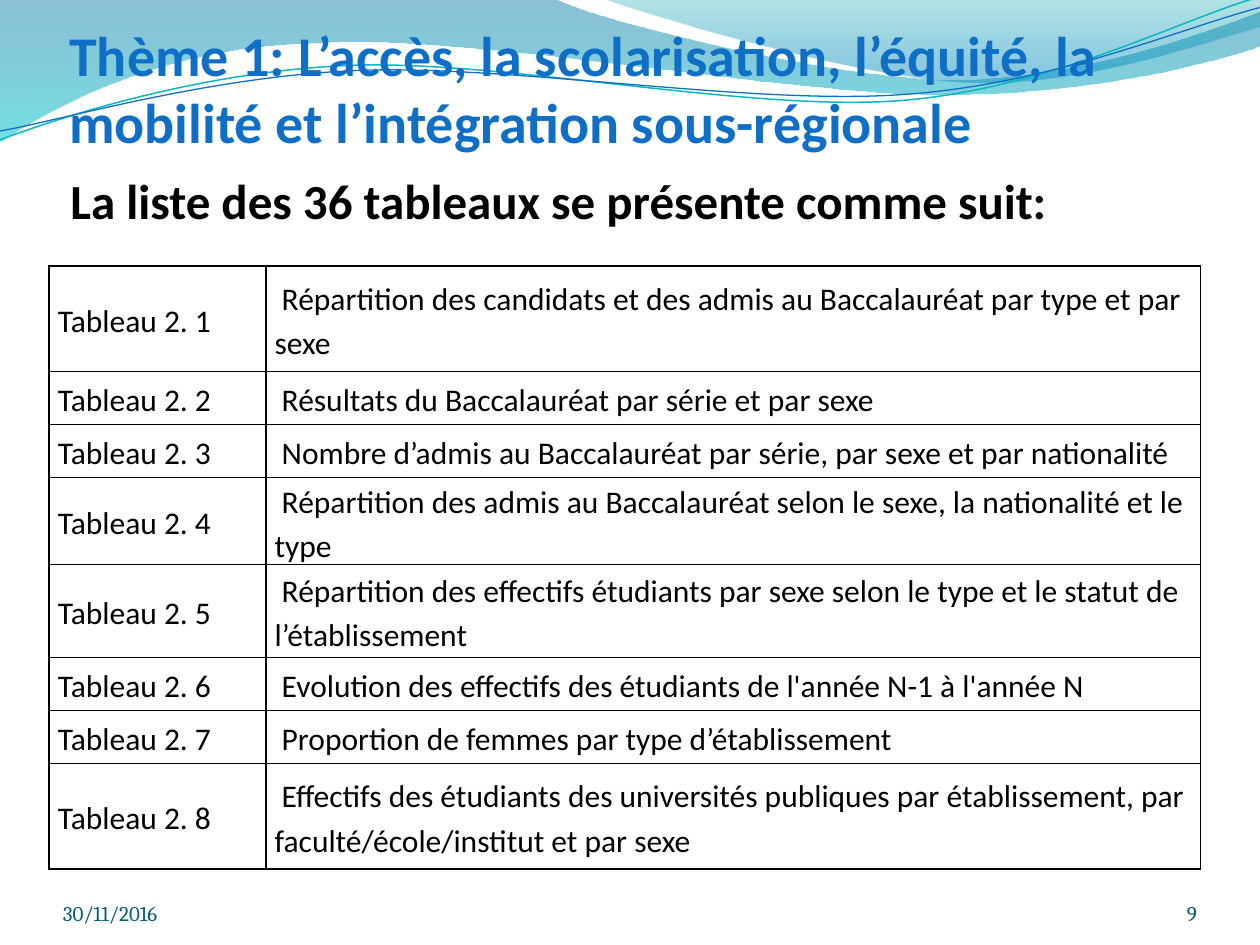
import math

import pptx
import pptx.util
import pptx.dml.color
import pptx.enum.text
import pptx.oxml
import pptx.oxml.ns
from pptx.util import Inches

RGBColor = pptx.dml.color.RGBColor
BLUE = RGBColor(0x0F, 0x6F, 0xC6)
TEAL = RGBColor(0x0A, 0xB8, 0xBF)
DARK = RGBColor(0x04, 0x5D, 0x75)
BLACK = RGBColor(0, 0, 0)
DEEP = RGBColor(0x00, 0x74, 0xA1)
AQUA = RGBColor(0x00, 0xC6, 0xCF)
SEA = RGBColor(0x00, 0xA1, 0xA9)
SKY = RGBColor(0x00, 0x8B, 0xBF)
ALIGN = pptx.enum.text.PP_ALIGN
ANCHOR = pptx.enum.text.MSO_ANCHOR
NS = pptx.oxml.ns.nsdecls("a")
TURN = 2.7

prs = pptx.Presentation()
prs.slide_width = Inches(10)
prs.slide_height = Inches(7.5)
slide = prs.slides.add_slide(prs.slide_layouts[6])


def add_wave(start, steps, close):
    """Two numbers in a step make a line, six a cubic curve."""
    dots = [tuple(map(Inches, step[-2:])) for step in [start] + steps]
    pen = slide.shapes.build_freeform(*dots[0])
    pen.add_line_segments(dots[1:], close=close)
    wave = pen.convert_to_shape()
    wave.shadow.inherit = False
    # Turn the straight parts into curves
    parts = wave._element.findall(".//" + pptx.oxml.ns.qn("a:lnTo"))
    for part, step in zip(parts, steps):
        if len(step) == 6:
            pts = "".join(
                f'<a:pt x="{Inches(x) - wave.left}" y="{Inches(y) - wave.top}"/>'
                for x, y in zip(step[::2], step[1::2]))
            part.getparent().replace(part, pptx.oxml.parse_xml(
                f"<a:cubicBezTo {NS}>{pts}</a:cubicBezTo>"))
    return wave


def add_label(words, left, top, width, height, font, size, color, bold=False,
              inset=0, align=ALIGN.LEFT):
    box = slide.shapes.add_textbox(*map(Inches, (left, top, width, height)))
    frame = box.text_frame
    frame.word_wrap = True
    frame.vertical_anchor = ANCHOR.BOTTOM
    frame.margin_left = frame.margin_right = frame.margin_bottom = 0
    frame.margin_top = Inches(inset)
    frame.text = words
    para = frame.paragraphs[0]
    para.alignment = align
    face = para.runs[0].font
    face.name, face.size, face.bold = font, pptx.util.Pt(size), bold
    face.color.rgb = color


# Filled waves: start, steps, then (place, colour, opacity) of each stop
bands = [
    ((0, 0), [(4.4, -0.01), (4.76, 0.17, 6.64, 0.63, 7.58, 0.63),
              (8.53, 0.63, 9.58, 0.26, 10, 0.09), (10.01, 0.36),
              (9.83, 0.44, 8.7, 0.76, 7.46, 0.75),
              (6.22, 0.75, 3.82, 0.28, 2.57, 0.34),
              (1.29, 0.36, 0.46, 0.83, -0.01, 1.13)],
     [(0, DEEP, 45), (1, AQUA, 55)]),
    ((4.79, -0.01), [(5.09, 0.11, 6.82, 0.62, 7.69, 0.65),
                     (8.56, 0.69, 9.61, 0.32, 10, 0.21), (10, 0)],
     [(0, SEA, 30), (0.8, SKY, 45)]),
]
for start, steps, shades in bands:
    band = add_wave(start, steps, True)
    band.line.fill.background()
    band.fill.gradient()
    band.fill.gradient_angle = 270
    for stop, (place, color, alpha) in zip(band.fill.gradient_stops, shades):
        stop.position = place
        stop.color.rgb = color
    tags = band.fill._xPr.findall(".//" + pptx.oxml.ns.qn("a:srgbClr"))
    for tag, (place, color, alpha) in zip(tags, shades):
        tag.append(pptx.oxml.parse_xml(f'<a:alpha {NS} val="{alpha * 1000}"/>'))

# Thin wave lines, laid level and then tilted as a whole
lines = [
    ((0, 1.11), [(0.48, 0.93, 1.58, 0.57, 2.77, 0.52),
                 (3.95, 0.47, 5.93, 0.89, 7.13, 0.8),
                 (8.33, 0.71, 9.38, 0.15, 9.98, -0.02)], TEAL, 0.85),
    ((0, 1.04), [(0.47, 0.96, 1.64, 0.61, 2.83, 0.56),
                 (4.03, 0.51, 5.97, 0.84, 7.17, 0.75),
                 (8.36, 0.67, 9.41, 0.21, 10, 0.06)], BLUE, 0.75),
]
cos, sin = math.cos(math.radians(TURN)), math.sin(math.radians(TURN))
for start, steps, color, width in lines:
    level = []
    for step in [start] + steps:
        flat = []
        for x, y in zip(step[::2], step[1::2]):
            x, y = x - 5, y - 0.58
            flat += [5 + x * cos - y * sin, 0.58 + x * sin + y * cos]
        level.append(tuple(flat))
    curve = add_wave(level[0], level[1:], False)
    curve.rotation = 360 - TURN
    curve.fill.background()
    curve.line.color.rgb = color
    curve.line.width = pptx.util.Pt(width)

# Title and lead
add_label("Thème 1: L’accès, la scolarisation, l’équité, la mobilité et "
          "l’intégration sous-régionale", 0.55, 0.39, 9, 0.84,
          "Calibri", 32, BLUE, True, 0.05)
add_label("La liste des 36 tableaux se présente comme suit:",
          0.56, 1.28, 9, 0.54, "Calibri", 28, BLACK, True, 0.05)

# Table: row height and wording
rows = [
    (0.84, "Répartition des candidats et des admis au Baccalauréat par type et par sexe"),
    (0.42, "Résultats du Baccalauréat par série et par sexe"),
    (0.42, "Nombre d’admis au Baccalauréat par série, par sexe et par nationalité"),
    (0.66, "Répartition des admis au Baccalauréat selon le sexe, la nationalité et le type"),
    (0.74, "Répartition des effectifs étudiants par sexe selon le type et le statut "
           "de l’établissement"),
    (0.42, "Evolution des effectifs des étudiants de l'année N-1 à l'année N"),
    (0.42, "Proportion de femmes par type d’établissement"),
    (0.84, "Effectifs des étudiants des universités publiques par établissement, "
           "par faculté/école/institut et par sexe"),
]
table = slide.shapes.add_table(len(rows), 2, Inches(0.39), Inches(2.11),
                               Inches(9.14), Inches(4.79)).table
table.first_row = table.horz_banding = False
table.columns[0].width = Inches(1.72)
table.columns[1].width = Inches(7.42)
for r, (height, words) in enumerate(rows):
    table.rows[r].height = Inches(height)
    for c, text in enumerate((f"Tableau 2. {r + 1}", " " + words)):
        cell = table.cell(r, c)
        cell.margin_left = cell.margin_right = Inches(0.07)
        cell.margin_top = cell.margin_bottom = 0
        cell.vertical_anchor = ANCHOR.MIDDLE
        cell.text_frame.text = text
        para = cell.text_frame.paragraphs[0]
        para.line_spacing = 1.15
        face = para.runs[0].font
        face.name, face.size = "Calibri", pptx.util.Pt(18)
        face.color.rgb = BLACK
        props = cell._tc.get_or_add_tcPr()
        for side in "LRTB":
            props.append(pptx.oxml.parse_xml(
                f'<a:ln{side} {NS} w="12700"><a:solidFill>'
                f'<a:srgbClr val="{BLACK}"/></a:solidFill></a:ln{side}>'))
        cell.fill.background()

# Footer
add_label("9", 8.67, 6.95, 0.83, 0.4, "Cambria", 12, DARK, align=ALIGN.RIGHT)
add_label("30/11/2016", 0.5, 6.95, 2.33, 0.4, "Cambria", 12, DARK)

prs.save("out.pptx")
